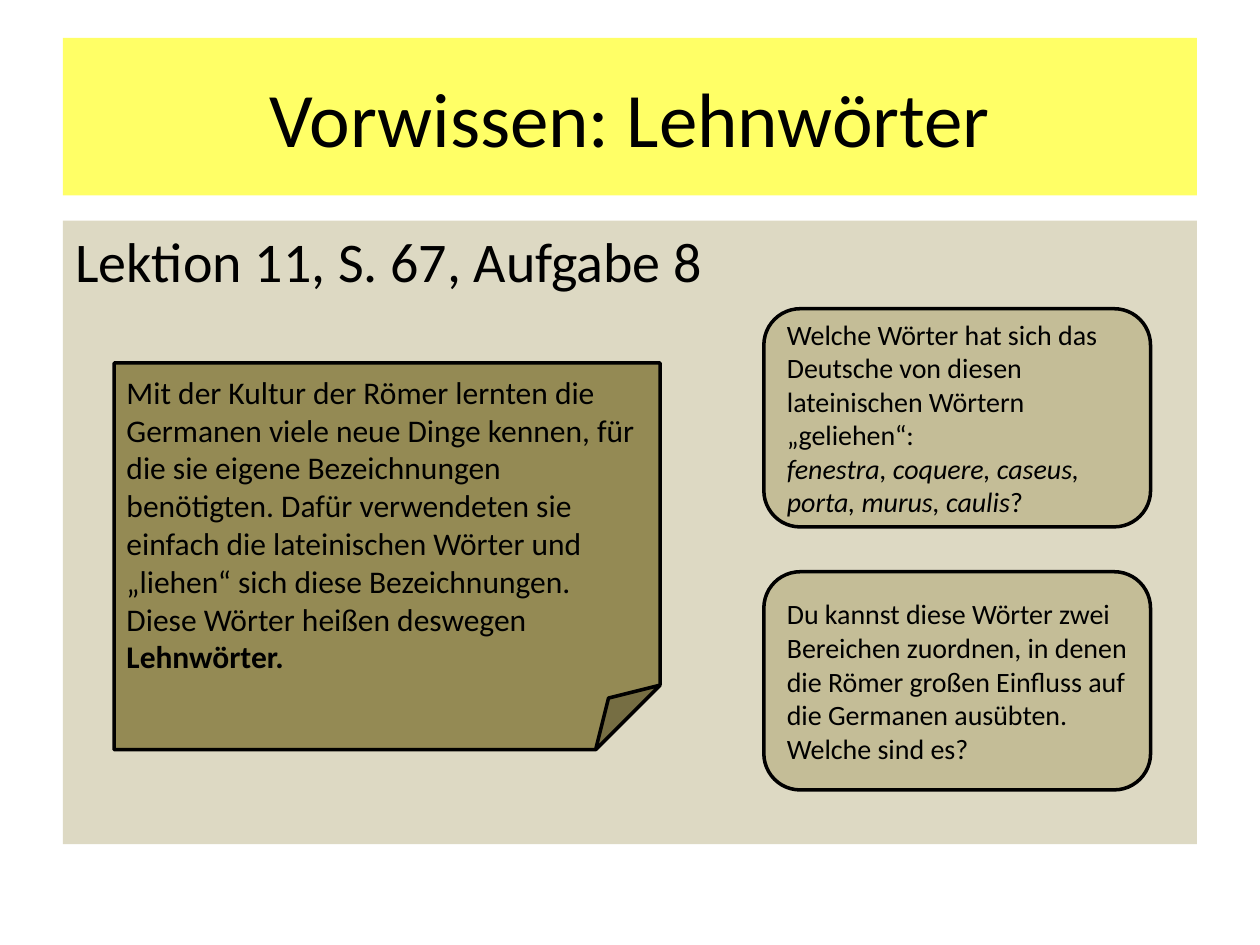
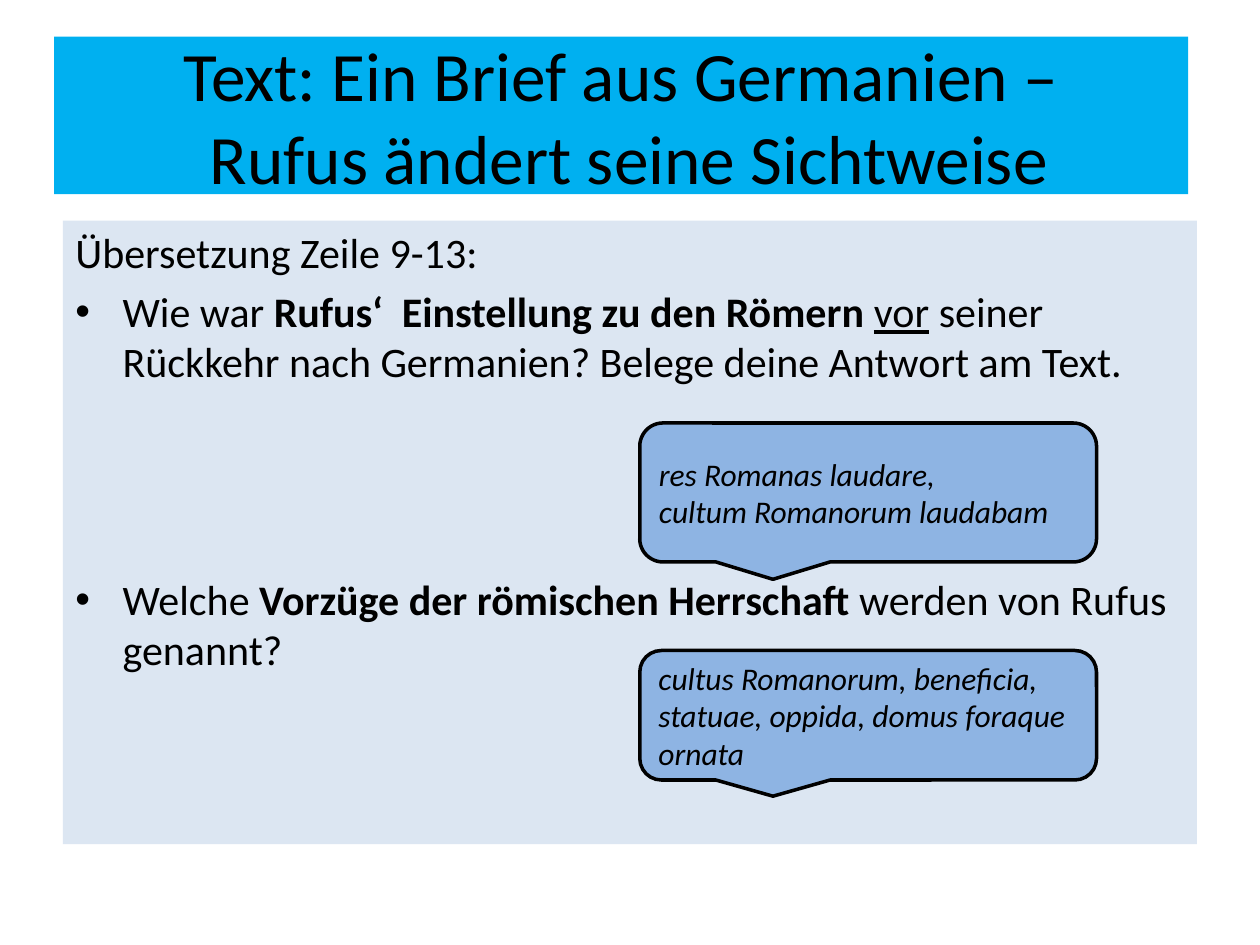
from dataclasses import dataclass

from lxml.etree import SubElement
from pptx import Presentation
from pptx.dml.color import RGBColor as RGB
from pptx.enum.shapes import MSO_SHAPE as Form
from pptx.enum.text import MSO_ANCHOR as Anchor, PP_ALIGN as Align
from pptx.oxml.ns import qn
from pptx.util import Pt


@dataclass(frozen=True)
class Theme:
    font: str = "Calibri"
    ink: str = "000000"
    yellow: str = "FFFF66"
    sand: str = "DDD9C3"
    olive: str = "948A54"
    khaki: str = "C4BD97"
    cyan: str = "00B0F0"
    pale: str = "DCE6F2"
    blue: str = "8EB4E3"
    title: float = 44
    title_two: float = 39.6
    lead: float = 32
    body: float = 24
    note: float = 18
    hint: float = 16
    edge: float = 2


T = Theme()


def add_box(slide, form, area, fill, edge=True, anchor=Anchor.MIDDLE):
    """Add a filled shape and return its text frame."""
    box = slide.shapes.add_shape(form, *map(Pt, area))
    box.shadow.inherit = False
    box.fill.solid()
    box.fill.fore_color.rgb = RGB.from_string(fill)
    if edge:
        box.line.color.rgb = RGB.from_string(T.ink)
        box.line.width = Pt(T.edge)
    else:
        box.line.fill.background()
    frame = box.text_frame
    frame.word_wrap = True
    frame.vertical_anchor = anchor
    return frame


def write(frame, size, *paras, align=Align.LEFT):
    """Fill the frame; a paragraph is a list of (text, style), style out of b, i, u."""
    frame.text = "\n".join("" if len(para) > 1 else para[0][0] for para in paras)
    for par, para in zip(frame.paragraphs, paras):
        par.alignment = align
        if len(para) > 1:
            for text, _ in para:
                par.add_run().text = text
        styles = [style for _, style in para]
        for num, run in enumerate(par.runs):
            style = styles[min(num, len(styles) - 1)]
            font = run.font
            font.name, font.size = T.font, Pt(size)
            font.color.rgb = RGB.from_string(T.ink)
            font.bold, font.italic, font.underline = (key in style for key in "biu")


deck = Presentation()
deck.slide_width, deck.slide_height = Pt(720), Pt(540)
blank = deck.slide_layouts[6]

# Title band and body panel of both slides
frames = []
for text, size, left, top, band, panel in (
    ("Vorwissen: Lehnwörter", T.title, 36, 21.6, T.yellow, T.sand),
    ("Text: Ein Brief aus Germanien –\v Rufus ändert seine Sichtweise",
     T.title_two, 31, 20.9, T.cyan, T.pale),
):
    slide = deck.slides.add_slide(blank)
    title = add_box(slide, Form.RECTANGLE, (left, top, 648, 90), band, edge=False)
    write(title, size, [(text, "")], align=Align.CENTER)
    body = add_box(slide, Form.RECTANGLE, (36, 126, 648, 356.4), panel,
                   edge=False, anchor=Anchor.TOP)
    frames.append((slide, body))
(loans, lead), (letter, tasks) = frames

# Slide 1: note on the left, two hints on the right
write(lead, T.lead, [("Lektion 11, S. 67, Aufgabe 8", "")])

note = add_box(loans, Form.FOLDED_CORNER, (65.2, 207.4, 312, 221), T.olive)
write(note, T.note, [
    ("Mit der Kultur der Römer lernten die Germanen viele neue Dinge kennen, "
     "für die sie eigene Bezeichnungen benötigten. Dafür verwendeten sie einfach "
     "die lateinischen Wörter und „liehen“ sich diese Bezeichnungen. "
     "Diese Wörter heißen deswegen ", ""),
    ("Lehnwörter.", "b"),
])

hints = (
    [[("Welche Wörter hat sich das Deutsche von diesen lateinischen Wörtern "
       "„geliehen“:", "")],
     [("fenestra, coquere, caseus, porta, murus, caulis", "i"), ("?", "")]],
    [[("Du kannst diese Wörter zwei Bereichen zuordnen, in denen die Römer großen "
       "Einfluss auf die Germanen ausübten. Welche sind es?", "")]],
)
for row, paras in enumerate(hints):
    hint = add_box(loans, Form.ROUNDED_RECTANGLE,
                   (436.5, 176.4 + 150.3 * row, 221, 124.7), T.khaki)
    write(hint, T.hint, *paras)

# Slide 2: two tasks, each with an answer in a callout
write(
    tasks, T.body,
    [("Übersetzung Zeile 9-13:", "")],
    [("Wie war ", ""), ("Rufus‘  Einstellung zu den Römern ", "b"), ("vor", "u"),
     (" seiner Rückkehr nach Germanien? Belege deine Antwort am Text.", "")],
    [("Welche ", ""), ("Vorzüge der römischen Herrschaft ", "b"),
     ("werden von Rufus genannt?", "")],
)
for par, gap in zip(tasks.paragraphs[1:], (4.8, 107)):
    par.space_before = Pt(gap)
    props = par._p.get_or_add_pPr()
    props.set("marL", str(Pt(27)))
    props.set("indent", str(Pt(-27)))
    SubElement(props, qn("a:buFont")).set("typeface", "Arial")
    SubElement(props, qn("a:buChar")).set("char", "•")

answers = (
    (241.7, 79.4, ("res Romanas laudare,", "cultum Romanorum laudabam")),
    (371.7, 74, ("cultus Romanorum, beneficia, statuae, oppida, domus foraque ornata",)),
)
for top, height, lines in answers:
    answer = add_box(letter, Form.ROUNDED_RECTANGULAR_CALLOUT,
                     (365.6, top, 261, height), T.blue)
    write(answer, T.note, *([(line, "i")] for line in lines))

deck.save("out.pptx")
